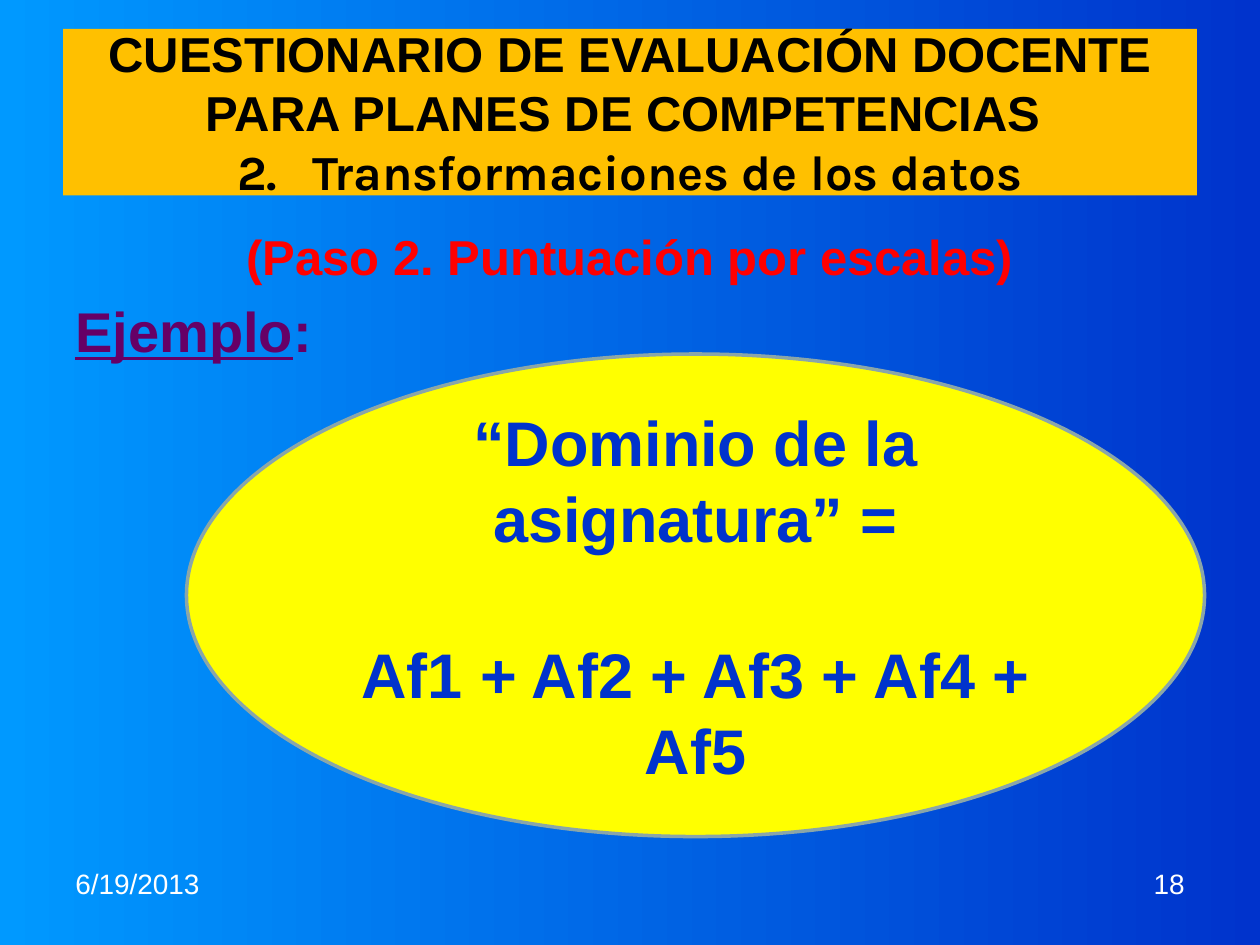
from dataclasses import dataclass

from lxml import etree
from pptx import Presentation
from pptx import util as u
from pptx.dml.color import RGBColor
from pptx.enum import shapes, text
from pptx.oxml.ns import qn


@dataclass(frozen=True)
class Theme:
    sky: str = "0099FF"
    blue: str = "0033CC"
    amber: str = "FFC000"
    yellow: str = "FFFF00"
    outline: str = "8AA6A8"
    black: str = "000000"
    white: str = "FFFFFF"
    red: str = "FF0000"
    purple: str = "660066"
    font: str = "Arial"
    accent_font: str = "Karla"
    footer: int = 16
    heading: int = 28
    label: int = 32
    formula: int = 36


T = Theme()
CENTER = text.PP_ALIGN.CENTER


def rgb(value):
    return RGBColor.from_string(value)


def box(left, top, width, height):
    return [u.Inches(v) for v in (left, top, width, height)]


def add_run(p, words, size, color, bold=True, font=T.font, underline=None):
    r = p.add_run()
    r.text = words
    r.font.name = font
    r.font.size = u.Pt(size)
    r.font.bold = bold
    r.font.underline = underline
    r.font.color.rgb = rgb(color)
    return r


def add_text_box(s, *place):
    tf = s.shapes.add_textbox(*box(*place)).text_frame
    tf.word_wrap = True
    return tf


def set_background(s):
    fill = s.background.fill
    fill.gradient()
    fill.gradient_angle = 0
    for stop, color, position in zip(fill.gradient_stops, (T.sky, T.blue), (0, 1)):
        stop.color.rgb = rgb(color)
        stop.position = position


def add_title(s):
    sp = s.shapes.title
    sp.left, sp.top, sp.width, sp.height = box(0.5, 0.23, 9, 1.32)
    sp.fill.solid()
    sp.fill.fore_color.rgb = rgb(T.amber)
    tf = sp.text_frame
    tf.auto_size = text.MSO_AUTO_SIZE.NONE
    tf.vertical_anchor = text.MSO_ANCHOR.MIDDLE
    p = tf.paragraphs[0]
    p.alignment = CENTER
    for line in ("CUESTIONARIO DE EVALUACIÓN DOCENTE", "PARA PLANES DE COMPETENCIAS "):
        add_run(p, line, T.heading, T.black)
        p.add_line_break()
    # Numbered subtitle, with a widened space after the number
    for part in ("2.", " ", "Transformaciones de los datos"):
        r = add_run(p, part, T.heading, T.black, font=T.accent_font)
        if part == " ":
            r.font._element.set("spc", "1300")


def add_step(s):
    tf = add_text_box(s, 0.5, 1.75, 9, 1.2)
    p = tf.paragraphs[0]
    p.alignment = CENTER
    p.space_before = u.Pt(3)
    add_run(p, "(Paso 2. Puntuación por escalas)", T.heading, T.red)
    p = tf.add_paragraph()
    p.space_before = u.Pt(6.4)
    add_run(p, "Ejemplo", T.label, T.purple, underline=True)
    add_run(p, ":", T.label, T.purple)


def add_formula(s):
    sp = s.shapes.add_shape(shapes.MSO_SHAPE.OVAL, *box(1.48, 2.81, 8.08, 3.83))
    sp.shadow.inherit = False
    sp.fill.solid()
    sp.fill.fore_color.rgb = rgb(T.yellow)
    sp.line.color.rgb = rgb(T.outline)
    sp.line.width = u.Pt(2)
    tf = sp.text_frame
    tf.word_wrap = True
    tf.vertical_anchor = text.MSO_ANCHOR.MIDDLE
    first, second = tf.paragraphs[0], tf.add_paragraph()
    second.space_before = u.Pt(46)
    for p, words in ((first, "“Dominio de la asignatura” ="),
                     (second, "Af1 + Af2 + Af3 + Af4 + Af5")):
        p.alignment = CENTER
        add_run(p, words, T.formula, T.blue)


def add_footer(s, left, words, align):
    p = add_text_box(s, left, 6.83, 2.33, 0.52).paragraphs[0]
    p.alignment = align
    add_run(p, words, T.footer, T.white, bold=False)


def main():
    prs = Presentation()
    prs.slide_width, prs.slide_height = u.Inches(10), u.Inches(7.5)
    s = prs.slides.add_slide(prs.slide_layouts[5])
    set_background(s)
    # Heading and example label
    add_title(s)
    add_step(s)
    # Scale formula
    add_formula(s)
    # Date and page number
    add_footer(s, 0.5, "6/19/2013", text.PP_ALIGN.LEFT)
    add_footer(s, 7.17, "18", text.PP_ALIGN.RIGHT)
    prs.save("out.pptx")


if __name__ == "__main__":
    main()
